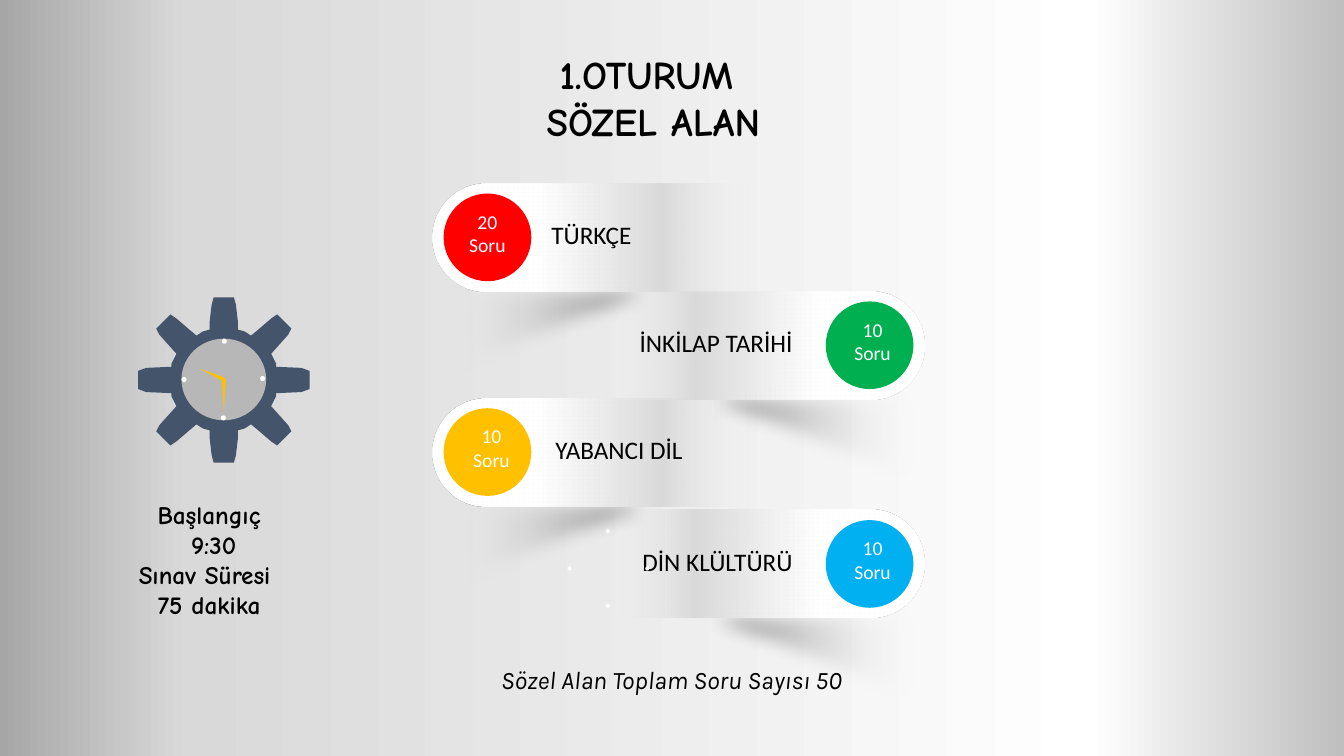
from lxml.etree import SubElement
from pptx import Presentation
from pptx.dml.color import RGBColor
from pptx.enum.shapes import MSO_SHAPE
from pptx.enum.text import MSO_AUTO_SIZE, PP_ALIGN
from pptx.oxml.ns import qn
from pptx.util import Inches, Pt

BLACK = RGBColor(0x00, 0x00, 0x00)
WHITE = RGBColor(0xFF, 0xFF, 0xFF)
RED = RGBColor(0xFF, 0x00, 0x00)
GREEN = RGBColor(0x00, 0xB0, 0x50)
AMBER = RGBColor(0xFF, 0xC0, 0x00)
BLUE = RGBColor(0x00, 0xB0, 0xF0)
SLATE = RGBColor(0x44, 0x54, 0x6A)
DIAL_GRAY = RGBColor(0xB7, 0xB7, 0xB7)
SILVER = RGBColor(0xBF, 0xBF, 0xBF)
LIGHT = RGBColor(0xD9, 0xD9, 0xD9)
PALE = RGBColor(0xF1, 0xF1, 0xF1)
DARK = RGBColor(0xA6, 0xA6, 0xA6)

# Gradient stops: position in percent, colour, opacity in percent
BACKDROP = [(0, SILVER, 100), (19, WHITE, 100), (86, LIGHT, 100), (100, DARK, 100)]
BAND = [(33, WHITE, 100), (72, LIGHT, 100), (100, PALE, 0)]
SHADE = [(0, WHITE, 0), (95, BLACK, 100)]


def set_gradient(owner, fill, stops, angle):
    """Fill a shape or slide background; the angle runs counter-clockwise."""
    fill.gradient()
    fill.gradient_angle = angle
    gs_list = owner._element.xpath(".//a:gsLst")[0]
    for gs in list(gs_list):
        gs_list.remove(gs)
    for position, color, opacity in stops:
        gs = SubElement(gs_list, qn("a:gs"), pos=str(position * 1000))
        clr = SubElement(gs, qn("a:srgbClr"), val=str(color))
        if opacity < 100:
            SubElement(clr, qn("a:alpha"), val=str(opacity * 1000))


def add_text(box, lines, align=PP_ALIGN.CENTER, **font):
    tf = s.shapes.add_textbox(*map(Inches, box)).text_frame
    tf.word_wrap = True
    tf.auto_size = MSO_AUTO_SIZE.SHAPE_TO_FIT_TEXT
    for i, line in enumerate(lines):
        p = tf.paragraphs[0] if i == 0 else tf.add_paragraph()
        p.alignment = align
        r = p.add_run()
        r.text = line
        r.font.color.rgb = font["color"]
        for key in font.keys() - {"color"}:
            setattr(r.font, key, font[key])


prs = Presentation()
prs.slide_width, prs.slide_height = Inches(13.33), Inches(7.5)
s = prs.slides.add_slide(prs.slide_layouts[6])
set_gradient(s, s.background.fill, BACKDROP, 180)

# Subject bands: band top, on the right side, colour, count, count x, label, label box
subjects = [
    (0.78, False, RED, "20", 4.35, "TÜRKÇE", 5.37, 1.55),
    (1.85, True, GREEN, "10", 8.17, "İNKİLAP TARİHİ", 6.23, 1.73),
    (2.91, False, AMBER, "10", 4.39, "YABANCI DİL", 5.41, 1.55),
    (4.02, True, BLUE, "10", 8.17, "DİN KLÜLTÜRÜ", 6.23, 1.73),
]
for top, right, *_ in reversed(subjects):
    shade = s.shapes.add_shape(MSO_SHAPE.RIGHT_TRIANGLE, Inches(6.02 if right else 4.3),
                               Inches(top + 1.96), Inches(3.15), Inches(1.17))
    band = s.shapes.add_shape(MSO_SHAPE.ROUND_2_SAME_RECTANGLE, Inches(7.06 if right else 5.33),
                              Inches(top), Inches(1.07), Inches(3.15))
    band.adjustments[0], band.adjustments[1] = 0.5, 0
    band.rotation = 90 if right else 270
    shade._element.spPr.xfrm.set("flipV", "1")
    if right:
        for sp in (shade, band):
            sp._element.spPr.xfrm.set("flipH", "1")
    for sp, stops, angle in ((shade, SHADE, 0), (band, BAND, 270)):
        set_gradient(sp, sp.fill, stops, angle)
        sp.line.fill.background()
        sp.shadow.inherit = False
    effects = shade._element.spPr.find(qn("a:effectLst"))
    SubElement(effects, qn("a:softEdge"), rad=str(Pt(12.5)))

# Gear outline: one quarter as offsets from the centre, mirrored to the other three
GEAR_X, GEAR_Y = 2.22, 3.77
quarter = [
    (0.1, 0.82), (0.12, 0.75), (0.14, 0.58), (0.14, 0.5), (0.21, 0.48), (0.27, 0.44),
    (0.33, 0.49), (0.47, 0.61), (0.53, 0.65), (0.67, 0.51), (0.64, 0.45), (0.47, 0.26),
    (0.52, 0.16), (0.52, 0.13), (0.54, 0.13), (0.77, 0.12), (0.85, 0.09),
]
outline = []
for sx, sy, step in ((1, -1, 1), (1, 1, -1), (-1, 1, 1), (-1, -1, -1)):
    outline += [(Inches(GEAR_X + sx * x), Inches(GEAR_Y + sy * y)) for x, y in quarter[::step]]
builder = s.shapes.build_freeform(*outline[0])
builder.add_line_segments(outline[1:], close=True)
gear = builder.convert_to_shape()
gear.fill.solid()
gear.fill.fore_color.rgb = SLATE
gear.line.fill.background()
gear.shadow.inherit = False

# Solid shapes: preset, box, colour, rotation, flip
OVAL, HAND = MSO_SHAPE.OVAL, MSO_SHAPE.ISOSCELES_TRIANGLE
solids = [(OVAL, (8.19 if right else 4.4, top + 1.14, 0.87, 0.87), color, 0, None)
          for top, right, color, *_ in subjects]
solids += [
    (OVAL, (1.8, 3.36, 0.84, 0.81), DIAL_GRAY, 0, None),
    (HAND, (2.2, 3.76, 0.04, 0.33), AMBER, 0, "flipV"),
    (HAND, (2.08, 3.58, 0.04, 0.26), AMBER, 294, "flipH"),
]
hour_marks = [(2.2, 3.36), (2.58, 3.73), (2.19, 4.12), (1.8, 3.74)]
solids += [(OVAL, (x, y, 0.05, 0.05), WHITE, 0, None) for x, y in hour_marks]

for top, right, color, count, count_x, label, label_x, label_w in subjects:
    add_text((label_x, top + 1.35, label_w, 0.4), [label],
             PP_ALIGN.RIGHT if right else PP_ALIGN.LEFT,
             name="Calibri", size=Pt(18), color=BLACK)

loose_dots = [(6.4, 5.62), (6.01, 5.25), (6.01, 5.99), (5.63, 5.62)]
solids += [(OVAL, (x, y, 0.04, 0.04), WHITE, 0, None) for x, y in loose_dots]
for preset, box, color, rotation, flip in solids:
    sp = s.shapes.add_shape(preset, *map(Inches, box))
    sp.fill.solid()
    sp.fill.fore_color.rgb = color
    sp.line.fill.background()
    sp.shadow.inherit = False
    sp.rotation = rotation
    if flip:
        sp._element.spPr.xfrm.set(flip, "1")

for top, right, color, count, count_x, *_ in subjects:
    add_text((count_x, top + 1.25, 0.97, 0.57), [count, "Soru"],
             name="Calibri", size=Pt(14), color=WHITE)

add_text((3.07, 0.45, 6.82, 1.04), ["1.OTURUM ", "SÖZEL ALAN"],
         name="Comic Neue", size=Pt(28), bold=True, color=BLACK)
add_text((4.87, 6.54, 4.84, 0.4), ["Sözel Alan Toplam Soru Sayısı 50"], PP_ALIGN.LEFT,
         name="Karla", size=Pt(18), italic=True, color=BLACK)
add_text((0.86, 4.9, 2.43, 1.31), ["Başlangıç", " 9:30", "Sınav Süresi ", "75 dakika"],
         name="Comic Neue", size=Pt(18), bold=True, color=BLACK)

prs.save("out.pptx")
